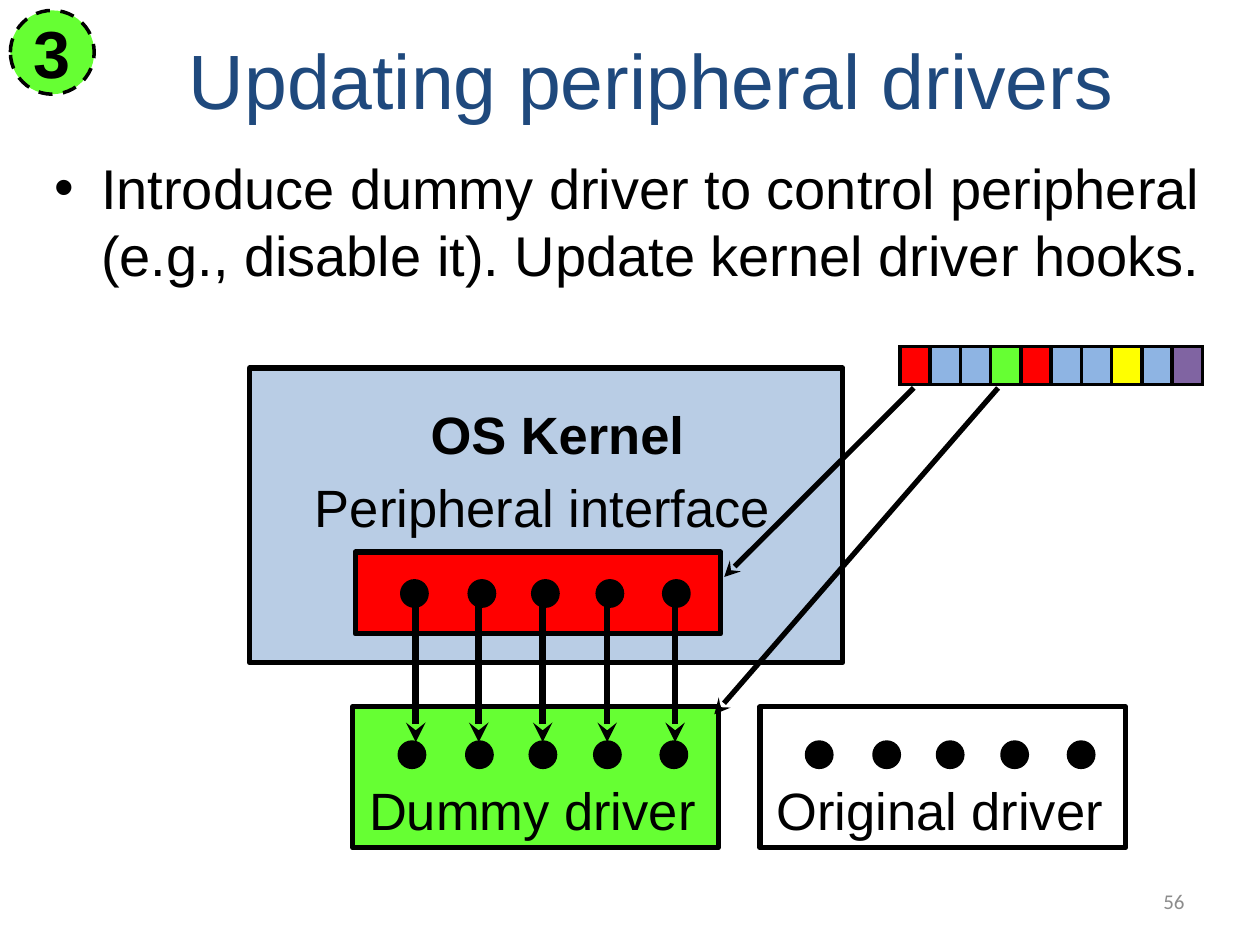
from dataclasses import dataclass

from lxml import etree
from pptx import Presentation
from pptx.dml.color import RGBColor
from pptx.enum.dml import MSO_LINE
from pptx.enum.shapes import MSO_CONNECTOR, MSO_SHAPE
from pptx.enum.text import MSO_ANCHOR, PP_ALIGN
from pptx.oxml.ns import qn
from pptx.util import Cm, Pt

RECT, OVAL = MSO_SHAPE.RECTANGLE, MSO_SHAPE.OVAL
LINE, DASH = MSO_CONNECTOR.STRAIGHT, MSO_LINE.DASH
TOP, MID = MSO_ANCHOR.TOP, MSO_ANCHOR.MIDDLE
LEFT, MIDDLE, RIGHT = PP_ALIGN.LEFT, PP_ALIGN.CENTER, PP_ALIGN.RIGHT


@dataclass(frozen=True)
class Theme:
    font: str = "Arial"
    small: str = "Calibri"
    black: str = "000000"
    white: str = "FFFFFF"
    navy: str = "1F497D"
    gray: str = "8C8C8C"
    pale: str = "B9CDE5"
    blue: str = "8EB4E3"
    red: str = "FF0000"
    green: str = "66FF33"
    yellow: str = "FFFF00"
    plum: str = "8064A2"
    title: float = 44
    badge: float = 38
    body: float = 32
    label: float = 30
    page: float = 12


T = Theme()

# Offsets in cm from the left side of a hook box
DOT = 0.51
DOTS = (0.94, 2.3, 3.58, 4.88, 6.22)
HOOKS = (1.22, 2.49, 3.78, 5.08, 6.45)


def rgb(code):
    return RGBColor.from_string(code)


def write(frame, text, size, color=T.black, name=T.font, bold=False,
          align=LEFT, anchor=TOP):
    frame.word_wrap = True
    frame.vertical_anchor = anchor
    par = frame.paragraphs[0]
    par.alignment = align
    run = par.add_run()
    run.text = text
    for key, val in {"size": Pt(size), "name": name, "bold": bold}.items():
        setattr(run.font, key, val)
    run.font.color.rgb = rgb(color)
    return par


def label(slide, box, text, size=T.label, **style):
    frame = slide.shapes.add_textbox(*map(Cm, box)).text_frame
    return write(frame, text, size, **style)


def block(slide, kind, box, fill, width=3):
    shape = slide.shapes.add_shape(kind, *map(Cm, box))
    shape.shadow.inherit = False
    shape.fill.solid()
    shape.fill.fore_color.rgb = rgb(fill)
    shape.line.color.rgb = rgb(T.black)
    shape.line.width = Pt(width)
    return shape


def arrow(slide, start, end, width=3):
    link = slide.shapes.add_connector(LINE, *map(Cm, start + end))
    link.line.color.rgb = rgb(T.black)
    link.line.width = Pt(width)
    props = link.line._get_or_add_ln()
    etree.SubElement(props, qn("a:tailEnd"), type="stealth")
    etree.SubElement(link._element.spPr, qn("a:effectLst"))


def dots(slide, left, top):
    for step in DOTS:
        block(slide, OVAL, (left + step, top, DOT, DOT), T.black, 2)


def bullet(slide, box, text):
    par = label(slide, box, text, T.body)
    par.space_before = Pt(T.body * 0.2)
    props = par._p.get_or_add_pPr()
    props.set("marL", str(Cm(0.95)))
    props.set("indent", str(-Cm(0.95)))
    etree.SubElement(props, qn("a:buFont"), typeface=T.font)
    etree.SubElement(props, qn("a:buChar"), char="•")


def kernel(slide, box):
    left, top = box[:2]
    block(slide, RECT, box, T.pale)
    label(slide, (left + 3.4, top + 0.56, 7.62, 1.55), "OS Kernel", bold=True)
    label(slide, (left + 1.07, top + 2.03, 13.08, 1.55),
          "Peripheral interface")
    # Interface hooks
    block(slide, RECT, (left + 2.13, top + 3.71, 7.37, 1.65), T.red)
    dots(slide, left + 2.13, top + 4.29)


def driver(slide, box, text, fill):
    left, top = box[:2]
    block(slide, RECT, box, fill)
    dots(slide, left, top + 0.71)
    label(slide, (left + 0.08, top + 1.3, 9.6, 1.55), text)


def hooks(slide, left, top, drop):
    for step in HOOKS:
        arrow(slide, (left + step, top), (left + step, top + drop), 3.75)


def edge(cell):
    props = cell._tc.get_or_add_tcPr()
    for side in ("lnL", "lnR", "lnT", "lnB"):
        line = etree.SubElement(props, qn(f"a:{side}"), w=str(Pt(2.25)))
        paint = etree.SubElement(line, qn("a:solidFill"))
        etree.SubElement(paint, qn("a:srgbClr"), val=T.black)


def strip(slide, box, fills):
    table = slide.shapes.add_table(1, len(fills), *map(Cm, box)).table
    table.first_row = table.horz_banding = False
    for col, fill in enumerate(fills):
        table.columns[col].width = Cm(box[2] / len(fills))
        cell = table.cell(0, col)
        for side in ("left", "right", "top", "bottom"):
            setattr(cell, f"margin_{side}", 0)
        edge(cell)
        cell.fill.solid()
        cell.fill.fore_color.rgb = rgb(fill)


def badge(slide, box, text):
    shape = block(slide, OVAL, box, T.green, 2)
    shape.line.dash_style = DASH
    frame = shape.text_frame
    for side in ("left", "right", "top", "bottom"):
        setattr(frame, f"margin_{side}", 0)
    write(frame, text, T.badge, bold=True, align=MIDDLE, anchor=MID)


def main():
    deck = Presentation()
    deck.slide_width, deck.slide_height = Cm(25.4), Cm(19.05)
    slide = deck.slides.add_slide(deck.slide_layouts[6])

    # Heading and bullet
    label(slide, (1.7, 0, 22.86, 3.18), "Updating peripheral drivers",
          T.title, color=T.navy, align=MIDDLE, anchor=MID)
    bullet(slide, (0.84, 2.97, 23.93, 13),
           "Introduce dummy driver to control peripheral "
           "(e.g., disable it). Update kernel driver hooks.")

    # Kernel hooked to the dummy driver
    kernel(slide, (5.03, 7.42, 11.96, 5.94))
    driver(slide, (7.11, 14.25, 7.37, 2.84), "Dummy driver", T.green)
    hooks(slide, 7.16, 11.96, 3)
    driver(slide, (15.32, 14.25, 7.37, 2.84), "Original driver", T.white)

    # Update strip and its targets
    strip(slide, (18.14, 6.99, 6.1, 0.76),
          (T.red, T.blue, T.blue, T.green, T.red,
           T.blue, T.blue, T.yellow, T.blue, T.plum))
    arrow(slide, (18.42, 7.82), (14.6, 11.63))
    arrow(slide, (20.12, 7.82), (14.4, 14.4))

    # Step badge and page number
    badge(slide, (0.21, 0.21, 1.69, 1.69), "3")
    label(slide, (18.2, 17.66, 5.93, 1.01), "56", T.page, color=T.gray,
          name=T.small, align=RIGHT, anchor=MID)
    deck.save("out.pptx")


if __name__ == "__main__":
    main()
